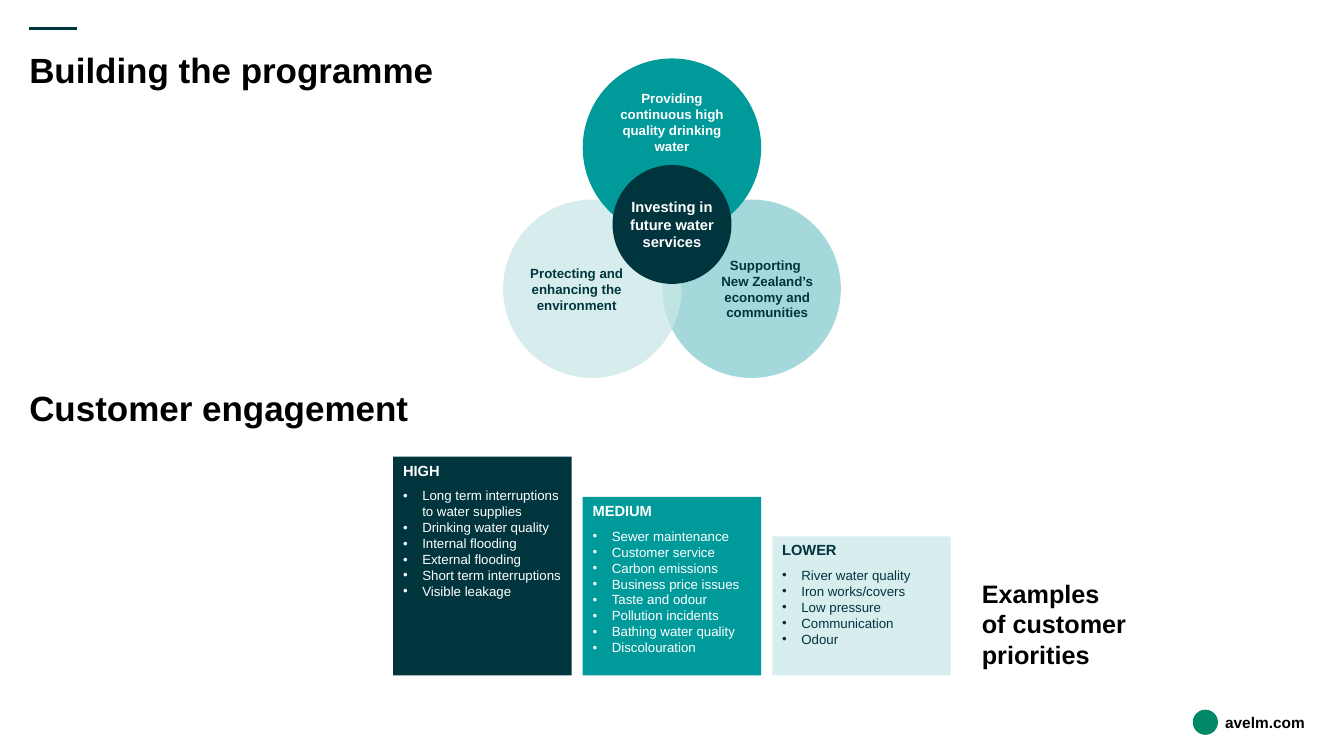
"""Build the slide on programme aims and customer priorities."""
from collections import namedtuple
from copy import deepcopy

from lxml.etree import SubElement
from pptx import Presentation
from pptx.dml.color import RGBColor
from pptx.enum.shapes import MSO_CONNECTOR, MSO_SHAPE
from pptx.enum.text import MSO_ANCHOR, PP_ALIGN
from pptx.oxml.ns import qn
from pptx.util import Inches, Pt

Box = namedtuple("Box", "left top width height")

WIDTH, HEIGHT = 13.33, 7.5
MARGIN = 0.29
UNIT = 1.77
GUTTER = 0.11
INDENT = 0.19
DARK, TEAL, WHITE, BLACK = "00353E", "009A9B", "FFFFFF", "000000"

PRIORITIES = [
    ("HIGH", DARK, WHITE, 2.17,
     ["Long term interruptions to water supplies", "Drinking water quality",
      "Internal flooding", "External flooding", "Short term interruptions",
      "Visible leakage"]),
    ("MEDIUM", TEAL, WHITE, 1.77,
     ["Sewer maintenance", "Customer service", "Carbon emissions",
      "Business price issues", "Taste and odour", "Pollution incidents",
      "Bathing water quality", "Discolouration"]),
    ("LOWER", "D7EDEE", DARK, 1.38,
     ["River water quality", "Iron works/covers", "Low pressure",
      "Communication", "Odour"]),
]


def rgb(value):
    """Turn a hex string into a colour."""
    return RGBColor.from_string(value)


def emu(box):
    """Convert a box in inches to slide units."""
    return [Inches(length) for length in box]


def write(paragraph, text, size, color, bold=True, align=PP_ALIGN.LEFT, after=0, bullet=False):
    """Write formatted text into a paragraph, breaking lines at newlines."""
    paragraph.alignment = align
    paragraph.space_after = Pt(after)
    for number, line in enumerate(text.split("\n")):
        if number:
            paragraph.add_line_break()
        run = paragraph.add_run()
        run.text = line
        run.font.name = "Arial"
        run.font.size = Pt(size)
        run.font.bold = bold
        run.font.color.rgb = rgb(color)
    for line_break in paragraph._p.findall(qn("a:br")):
        line_break.insert(0, deepcopy(run._r.rPr))
    if bullet:
        properties = paragraph._p.get_or_add_pPr()
        properties.set("marL", str(Inches(INDENT)))
        properties.set("indent", str(-Inches(INDENT)))
        SubElement(properties, qn("a:buFont"), typeface="Arial")
        SubElement(properties, qn("a:buChar"), char="•")


def set_frame(frame, insets, anchor):
    """Wrap a text frame and set its insets and anchor."""
    frame.word_wrap = True
    frame.vertical_anchor = anchor
    (frame.margin_left, frame.margin_top,
     frame.margin_right, frame.margin_bottom) = emu(insets)
    return frame


def add_label(slide, box, text, size, insets=(0, 0, 0, 0), anchor=MSO_ANCHOR.TOP):
    """Add a bold black line of text without a fill."""
    label = slide.shapes.add_textbox(*emu(box))
    frame = set_frame(label.text_frame, insets, anchor)
    write(frame.paragraphs[0], text, size, BLACK)


def add_panel(slide, preset, box, fill, opacity=100):
    """Add a flat filled shape without an outline."""
    panel = slide.shapes.add_shape(preset, *emu(box))
    panel.shadow.inherit = False
    panel.fill.solid()
    panel.fill.fore_color.rgb = rgb(fill)
    panel.line.fill.background()
    if opacity < 100:
        color = panel._element.spPr.find(qn("a:solidFill"))[0]
        SubElement(color, qn("a:alpha"), val=str(opacity * 1000))
    return panel


def add_accent(slide, box):
    """Draw the short rule along the top of a box."""
    left, top, width, _ = box
    rule = slide.shapes.add_connector(
        MSO_CONNECTOR.STRAIGHT, *emu((left, top, left + width, top)))
    rule.line.color.rgb = rgb(DARK)
    rule.line.width = Pt(2)
    SubElement(rule._element.spPr, qn("a:effectLst"))


def add_aims(slide, box):
    """Place three overlapping aims around a core circle."""
    middle = box.left + box.width / 2
    low = box.top + box.height - UNIT
    core = UNIT * 2 / 3
    aims = [
        (box.left + box.width - UNIT, low, UNIT, "88CCCE", 75, DARK, 9.5, (0.31, 0, 0, 0),
         "Supporting \nNew Zealand’s economy and communities"),
        (box.left, low, UNIT, "CAE7E8", 75, DARK, 9.5, (0, 0, 0.31, 0),
         "Protecting and enhancing the environment"),
        (middle - UNIT / 2, box.top, UNIT, TEAL, 100, WHITE, 9.5, (0, 0, 0, 0.51),
         "Providing continuous high quality drinking water"),
        (middle - core / 2, box.top + box.height / 3, core, DARK, 100, WHITE, 10.5,
         (0, 0, 0, 0), "Investing in future water services"),
    ]
    for left, top, diameter, fill, opacity, ink, size, insets, text in aims:
        circle = add_panel(slide, MSO_SHAPE.OVAL, Box(left, top, diameter, diameter),
                           fill, opacity)
        frame = set_frame(circle.text_frame, insets, MSO_ANCHOR.MIDDLE)
        write(frame.paragraphs[0], text, size, ink, align=PP_ALIGN.CENTER)


def add_priorities(slide, box):
    """Stand the priority columns on the bottom of the box, caption last."""
    bottom = box.top + box.height
    for column, (level, fill, ink, height, examples) in enumerate(PRIORITIES):
        left = box.left + column * (UNIT + GUTTER)
        card = add_panel(slide, MSO_SHAPE.RECTANGLE,
                         Box(left, bottom - height, UNIT, height), fill)
        frame = set_frame(card.text_frame, (0.1, 0.05, 0.1, 0.05), MSO_ANCHOR.TOP)
        write(frame.paragraphs[0], level, 10.5, ink, after=6)
        for example in examples:
            write(frame.add_paragraph(), example, 9.5, ink, bold=False, bullet=True)
    caption_left = box.left + len(PRIORITIES) * (UNIT + GUTTER) + 0.1
    caption = Box(caption_left, bottom - 1.01, box.left + box.width - caption_left, 1.01)
    add_label(slide, caption, "Examples \nof customer priorities", 18,
              insets=(0.1, 0.05, 0.1, 0.05))


def add_footer(slide, box):
    """Place a plain mark and the web address."""
    add_panel(slide, MSO_SHAPE.OVAL, Box(box.left, box.top, box.height, box.height), "008966")
    offset = box.height + 0.07
    address = Box(box.left + offset, box.top, box.width - offset, box.height)
    add_label(slide, address, "avelm.com", 11, anchor=MSO_ANCHOR.MIDDLE)


def main():
    """Assemble and save the slide."""
    deck = Presentation()
    deck.slide_width, deck.slide_height = Inches(WIDTH), Inches(HEIGHT)
    slide = deck.slides.add_slide(deck.slide_layouts[6])
    content = WIDTH - 2 * MARGIN
    add_accent(slide, Box(MARGIN, 0.28, 0.47, 0))
    add_label(slide, Box(MARGIN, 0.48, content, 0.71), "Building the programme", 25)
    add_label(slide, Box(MARGIN, 3.83, content, 0.71), "Customer engagement", 25)
    add_aims(slide, Box(4.99, 0.58, 3.35, 3.17))
    add_priorities(slide, Box(3.9, 4.53, 7.9, 2.17))
    add_footer(slide, Box(11.83, 7.04, 1.3, 0.25))
    deck.save("out.pptx")


if __name__ == "__main__":
    main()
